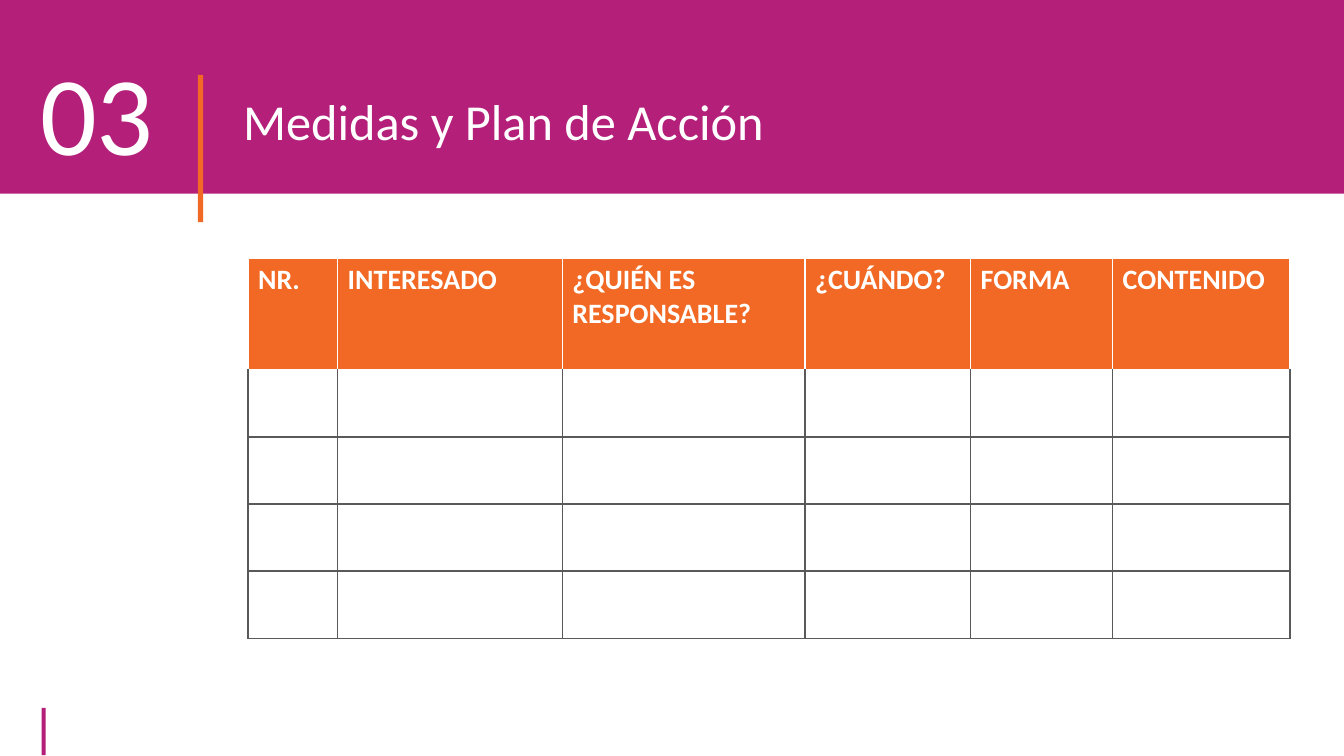
from lxml import etree
from pptx import Presentation
from pptx import util as u
from pptx.dml.color import RGBColor
from pptx.enum import shapes, text
from pptx.oxml import ns

MAGENTA = RGBColor(0xB4, 0x1F, 0x7A)
ORANGE = RGBColor(0xF1, 0x69, 0x24)
WHITE = RGBColor(0xFF, 0xFF, 0xFF)
GREY = RGBColor(0x59, 0x59, 0x59)


def write_heading(box, wording, size):
    frame = box.text_frame
    frame.word_wrap = True
    frame.auto_size = text.MSO_AUTO_SIZE.NONE
    frame.vertical_anchor = text.MSO_ANCHOR.TOP
    frame.text = wording
    para = frame.paragraphs[0]
    para.alignment = text.PP_ALIGN.LEFT
    para.line_spacing = 0.9
    para.font.name = "Calibri"
    para.font.size = u.Pt(size)
    para.font.color.rgb = WHITE


def add_border(cell, side, color):
    line = etree.SubElement(cell._tc.get_or_add_tcPr(), ns.qn(f"a:ln{side}"), w=str(u.Pt(1)))
    fill = etree.SubElement(line, ns.qn("a:solidFill"))
    etree.SubElement(fill, ns.qn("a:srgbClr"), val=str(color))


deck = Presentation()
deck.slide_width = u.Cm(33.87)
deck.slide_height = u.Cm(19.05)
page = deck.slides.add_slide(deck.slide_layouts[5])

# Header band, footer mark and divider
bars = [
    (0, 0, 33.87, 4.88, MAGENTA),
    (1.05, 17.84, 0.1, 1.19, MAGENTA),
    (4.99, 1.89, 0.13, 3.71, ORANGE),
]
for left, top, width, height, color in bars:
    bar = page.shapes.add_shape(
        shapes.MSO_SHAPE.RECTANGLE, u.Cm(left), u.Cm(top), u.Cm(width), u.Cm(height))
    bar.shadow.inherit = False
    bar.fill.solid()
    bar.fill.fore_color.rgb = color
    bar.line.fill.background()

# Title, brought in front of the band
title = page.shapes.title
title.left, title.top = u.Cm(5.87), u.Cm(2.31)
title.width, title.height = u.Cm(16.51), u.Cm(2.31)
write_heading(title, "Medidas y Plan de Acción", 36)
title.element.getparent().append(title.element)

# Section number
number = page.shapes.add_textbox(u.Cm(0.76), u.Cm(1.35), u.Cm(4.47), u.Cm(4.27))
write_heading(number, "03", 80)

# Action plan table
columns = [
    ("NR.", 2.26),
    ("INTERESADO", 5.66),
    ("¿QUIÉN ES RESPONSABLE?", 6.12),
    ("¿CUÁNDO?", 4.17),
    ("FORMA", 3.58),
    ("CONTENIDO", 4.47),
]
row_heights = [2.82] + [1.69] * 4
table = page.shapes.add_table(
    len(row_heights), len(columns), u.Cm(6.25), u.Cm(6.5),
    u.Cm(sum(width for _, width in columns)), u.Cm(sum(row_heights))).table
table.horz_banding = False

for row, height in zip(table.rows, row_heights):
    row.height = u.Cm(height)

for c, (label, width) in enumerate(columns):
    table.columns[c].width = u.Cm(width)
    for r in range(len(row_heights)):
        cell = table.cell(r, c)
        for side in "LRTB":
            by_header = r == 0 or (r == 1 and side == "T")
            add_border(cell, side, WHITE if by_header else GREY)
        cell.fill.solid()
        cell.fill.fore_color.rgb = ORANGE if r == 0 else WHITE
    header = table.cell(0, c)
    header.text = label
    font = header.text_frame.paragraphs[0].font
    font.name = "Calibri"
    font.size = u.Pt(20)
    font.bold = True
    font.color.rgb = WHITE

deck.save("out.pptx")
